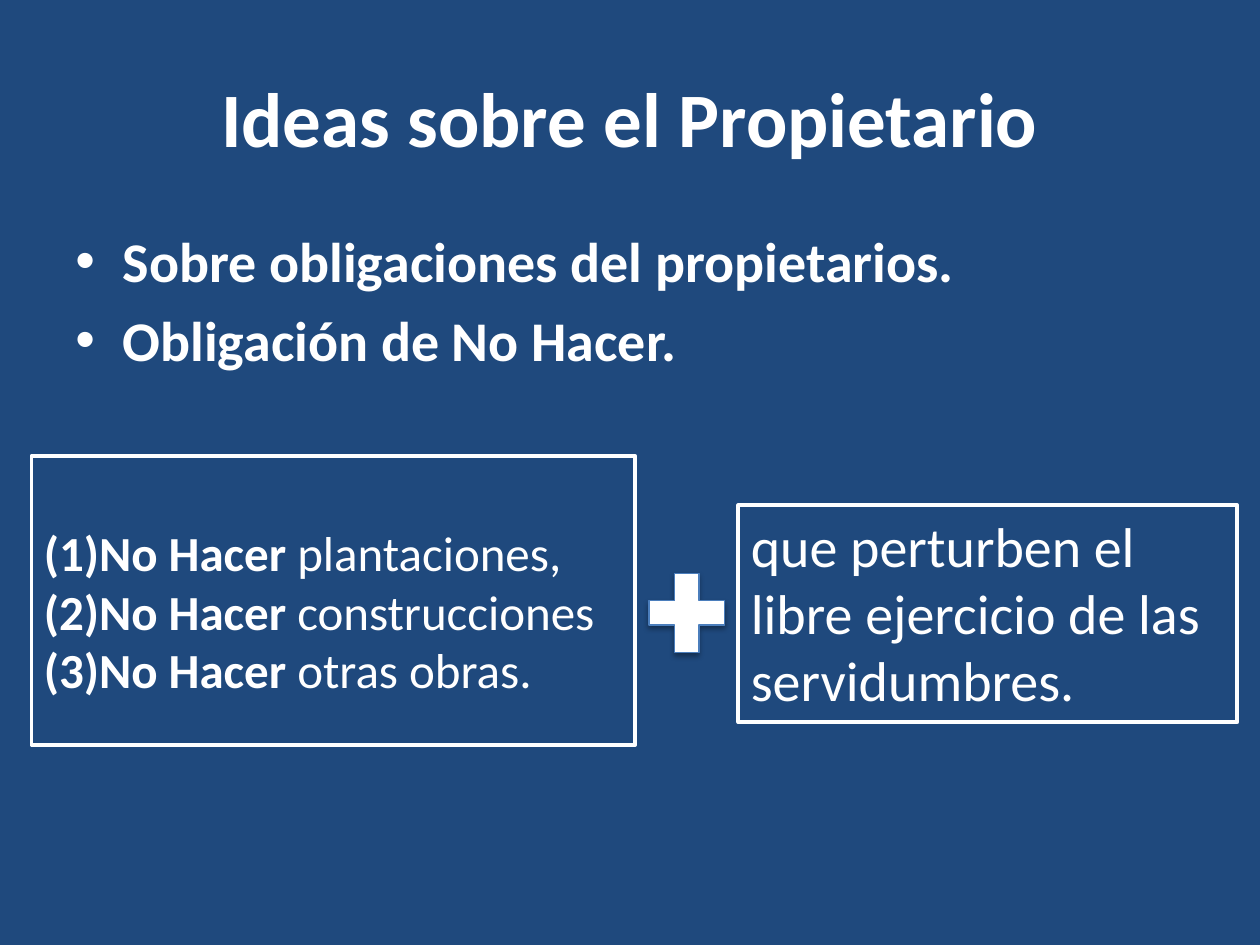
"""Build the slide on the owner's obligations."""
from lxml.etree import SubElement
from pptx import Presentation
from pptx.dml.color import RGBColor
from pptx.enum.shapes import MSO_SHAPE as Shape
from pptx.enum.text import MSO_ANCHOR as Anchor, PP_ALIGN as Align
from pptx.oxml.ns import qn
from pptx.util import Pt

TITLE = [[("Ideas sobre el Propietario", True)]]
IDEAS = [
    [("Sobre obligaciones del propietarios.", True)],
    [("Obligación de No Hacer.", True)],
]
FORBIDDEN = ["plantaciones,", "construcciones", "otras obras."]
DUTIES = [[("No Hacer ", True), (work, False)] for work in FORBIDDEN]
CONDITION = [[("que perturben el libre ejercicio de las servidumbres.", False)]]

THEME = {
    "font": "Calibri",
    "background": RGBColor(0x1F, 0x49, 0x7D),
    "ink": RGBColor(0xFF, 0xFF, 0xFF),
    "plus_edge": RGBColor(0x4B, 0x7E, 0xBC),
    "title": 44,
    "body": 32,
    "list": 28,
}
HANGING = 27
BULLET = ("buChar", {"char": "•"})
NUMBER = ("buAutoNum", {"type": "arabicParenBoth"})


def write(part, paragraphs, *, size, align=Align.LEFT, anchor=Anchor.TOP,
          before=0, marker=None, top_inset=3.6):
    frame = part.text_frame
    frame.word_wrap = True
    frame.vertical_anchor = anchor
    frame.margin_top = Pt(top_inset)
    for index, pieces in enumerate(paragraphs):
        paragraph = frame.paragraphs[0] if index == 0 else frame.add_paragraph()
        paragraph.alignment = align
        paragraph.space_before = Pt(before)
        if marker:
            tag, attributes = marker
            properties = paragraph._p.get_or_add_pPr()
            properties.set("marL", str(Pt(HANGING)))
            properties.set("indent", str(-Pt(HANGING)))
            SubElement(properties, qn("a:buFont"), typeface="Arial" if tag == "buChar" else "+mj-lt")
            SubElement(properties, qn(f"a:{tag}"), attributes)
        for words, bold in pieces:
            run = paragraph.add_run()
            run.text = words
            run.font.name = THEME["font"]
            run.font.size = Pt(size)
            run.font.bold = bold
            run.font.color.rgb = THEME["ink"]


def place(shapes, kind, box, edge, weight):
    part = shapes.add_shape(kind, *map(Pt, box))
    part.shadow.inherit = False
    part.fill.background()
    part.line.color.rgb = edge
    part.line.width = Pt(weight)
    return part


def cast_shadow(part):
    effects = part._element.spPr.find(qn("a:effectLst"))
    shadow = SubElement(effects, qn("a:outerShdw"), blurRad=str(Pt(3.1)),
                        dist=str(Pt(1.8)), dir="5400000", rotWithShape="0")
    color = SubElement(shadow, qn("a:srgbClr"), val="000000")
    SubElement(color, qn("a:alpha"), val="35000")


def main():
    deck = Presentation()
    deck.slide_width, deck.slide_height = Pt(720), Pt(540)
    slide = deck.slides.add_slide(deck.slide_layouts[6])
    slide.background.fill.solid()
    slide.background.fill.fore_color.rgb = THEME["background"]
    shapes = slide.shapes

    title = shapes.add_textbox(Pt(36), Pt(21.6), Pt(648), Pt(90))
    write(title, TITLE, size=THEME["title"], align=Align.CENTER, anchor=Anchor.MIDDLE)
    ideas = shapes.add_textbox(Pt(36), Pt(126), Pt(648), Pt(105))
    write(ideas, IDEAS, size=THEME["body"], align=Align.JUSTIFY, before=6.4, marker=BULLET)

    duties = place(shapes, Shape.RECTANGLE, (18, 260.6, 345, 165), THEME["ink"], 2.25)
    write(duties, DUTIES, size=THEME["list"], marker=NUMBER, top_inset=37.8)
    condition = place(shapes, Shape.RECTANGLE, (422, 288.7, 285, 124), THEME["ink"], 2.25)
    write(condition, CONDITION, size=THEME["body"])

    plus = place(shapes, Shape.MATH_PLUS, (363, 319.7, 59, 61.2), THEME["plus_edge"], 0.75)
    plus.fill.solid()
    plus.fill.fore_color.rgb = THEME["ink"]
    cast_shadow(plus)
    deck.save("out.pptx")


if __name__ == "__main__":
    main()
